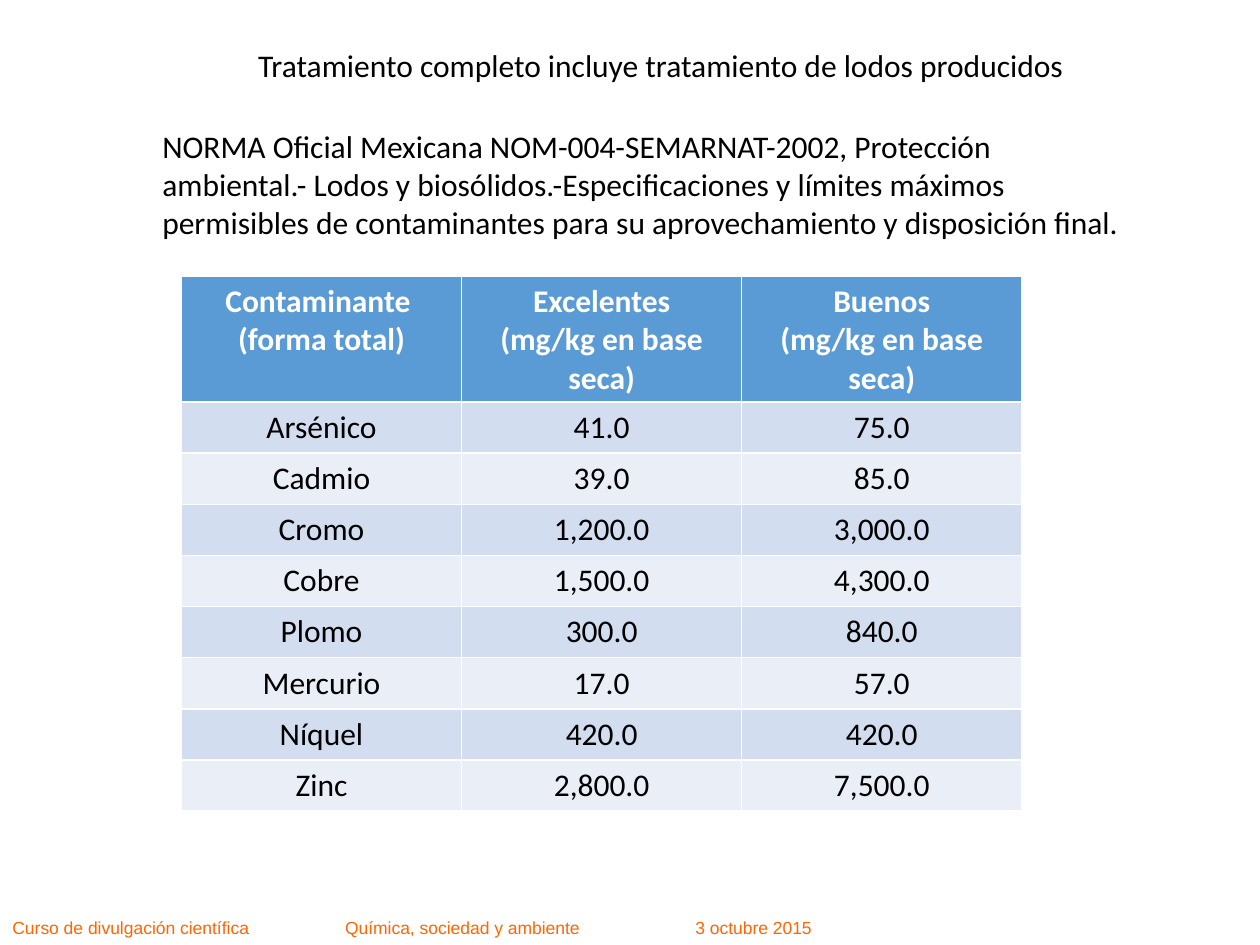
from lxml.etree import SubElement
from pptx import Presentation
from pptx.dml.color import RGBColor
from pptx.enum.text import PP_ALIGN
from pptx.oxml.ns import qn
from pptx.util import Inches, Pt

TITLE = "Tratamiento completo incluye tratamiento de lodos producidos"
NORM = ("NORMA Oficial Mexicana NOM-004-SEMARNAT-2002, Protección ambiental.- "
        "Lodos y biosólidos.-Especificaciones y límites máximos permisibles de "
        "contaminantes para su aprovechamiento y disposición final.")
FOOTER = ["Curso de divulgación científica", "Química, sociedad y ambiente", "3 octubre 2015"]
FOOTER_TABS = [2.64, 5.42]
LIMITS = [
    ("Contaminante \n(forma total)", "Excelentes\n(mg/kg en base seca)", "Buenos\n(mg/kg en base seca)"),
    ("Arsénico", "41.0", "75.0"),
    ("Cadmio", "39.0", "85.0"),
    ("Cromo", "1,200.0", "3,000.0"),
    ("Cobre", "1,500.0", "4,300.0"),
    ("Plomo", "300.0", "840.0"),
    ("Mercurio", "17.0", "57.0"),
    ("Níquel", "420.0", "420.0"),
    ("Zinc", "2,800.0", "7,500.0"),
]
HEADER_FILL, BANDS = "5B9BD5", ("D2DEEF", "EAEFF7")
TABLE_WIDTH, TABLE_HEIGHT, HEADER_HEIGHT = 6.67, 4.24, 0.99


def color(value):
    return RGBColor.from_string(value)


def style(paragraph, size=18, name="Calibri", ink="000000", bold=False):
    font = paragraph.font
    font.size, font.name, font.bold = Pt(size), name, bold
    font.color.rgb = color(ink)


def add_text(slide, text, box):
    frame = slide.shapes.add_textbox(*map(Inches, box)).text_frame
    frame.word_wrap = True
    frame.text = text
    return frame.paragraphs[0]


def add_footer(slide):
    footer = add_text(slide, "\t".join(FOOTER), (0, 7.23, 7.38, 0.27))
    tabs = SubElement(footer._p.get_or_add_pPr(), qn("a:tabLst"))
    for position in FOOTER_TABS:
        SubElement(tabs, qn("a:tab"), pos=str(Inches(position)), algn="l")
    style(footer, 10, "Arial", "FF6600")


def add_limits(slide):
    rows, columns = len(LIMITS), len(LIMITS[0])
    table = slide.shapes.add_table(rows, columns, Inches(1.44), Inches(2.19),
                                   Inches(TABLE_WIDTH), Inches(TABLE_HEIGHT)).table
    for column in table.columns:
        column.width = Inches(TABLE_WIDTH / columns)
    for r, values in enumerate(LIMITS):
        header = r == 0
        body_height = (TABLE_HEIGHT - HEADER_HEIGHT) / (rows - 1)
        table.rows[r].height = Inches(HEADER_HEIGHT if header else body_height)
        for c, value in enumerate(values):
            cell = table.cell(r, c)
            cell.text = value
            cell.fill.solid()
            cell.fill.fore_color.rgb = color(HEADER_FILL if header else BANDS[(r - 1) % 2])
            for paragraph in cell.text_frame.paragraphs:
                paragraph.alignment = PP_ALIGN.CENTER
                style(paragraph, ink="FFFFFF" if header else "000000", bold=header)


def main():
    deck = Presentation()
    deck.slide_width, deck.slide_height = Inches(10), Inches(7.5)
    slide = deck.slides.add_slide(deck.slide_layouts[6])
    add_footer(slide)
    style(add_text(slide, NORM, (1.19, 0.96, 7.87, 1.01)))
    add_limits(slide)
    style(add_text(slide, TITLE, (1.95, 0.32, 6.66, 0.4)))
    deck.save("out.pptx")


if __name__ == "__main__":
    main()
